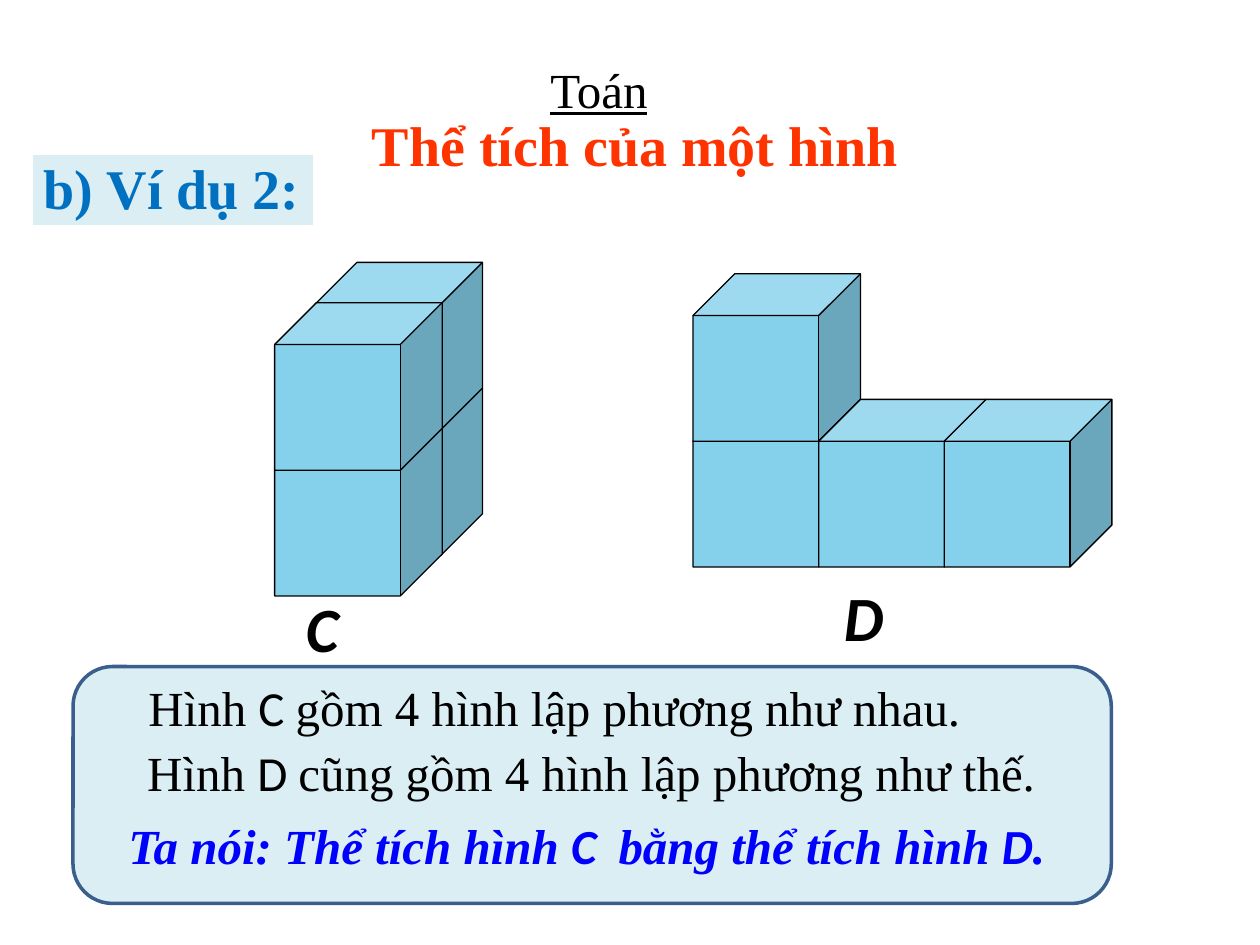
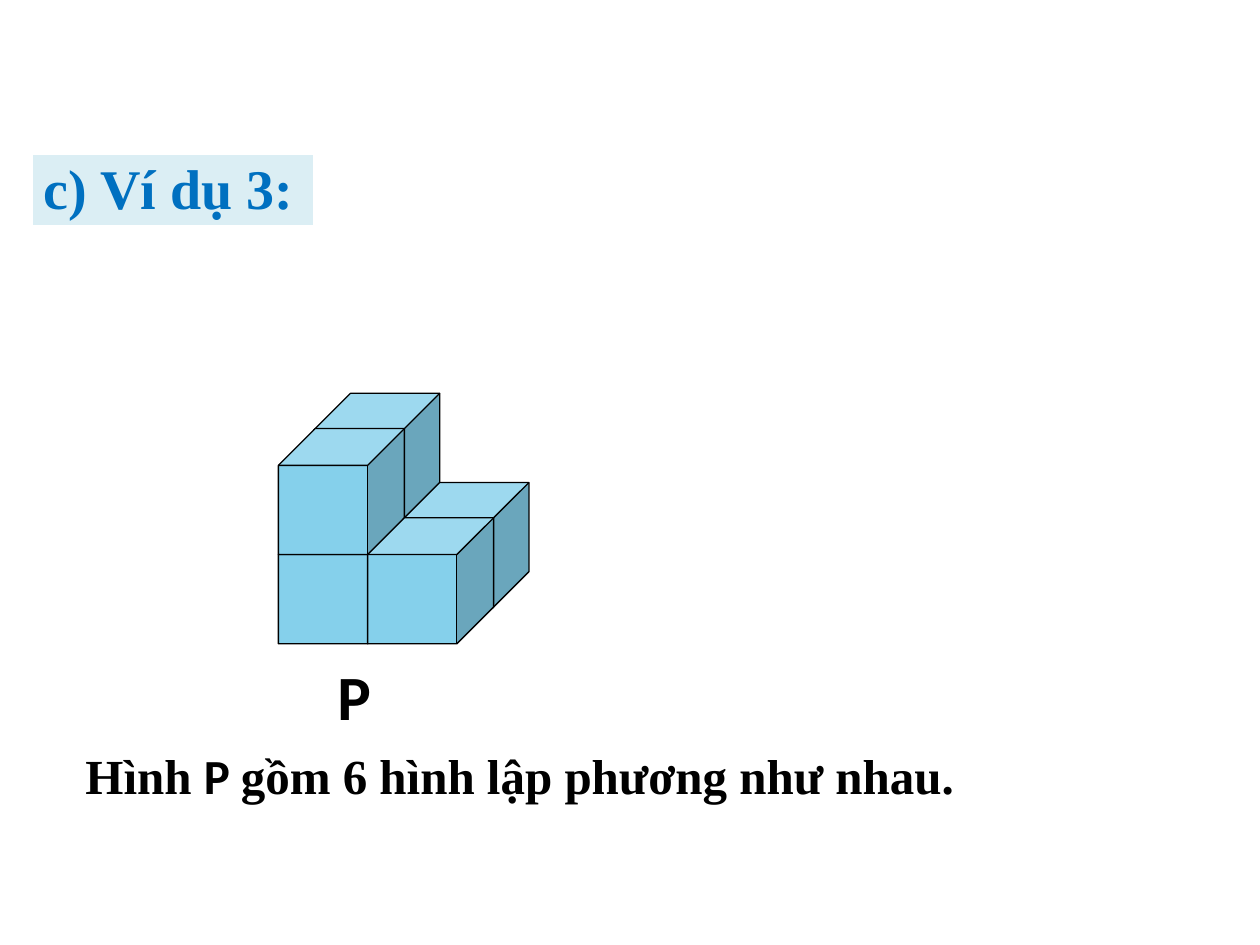
from dataclasses import dataclass

import pptx
import pptx.dml.color
import pptx.enum.shapes
import pptx.enum.text
import pptx.util
from pptx.util import Inches

Shape = pptx.enum.shapes.MSO_SHAPE
Align = pptx.enum.text.PP_ALIGN


@dataclass(frozen=True)
class Theme:
    serif: str = "Times New Roman"
    sans: str = "Calibri"
    black: str = "000000"
    white: str = "FFFFFF"
    pale: str = "DBEEF4"
    cube: str = "85D0EB"
    edge: str = "3A5F8C"
    head: str = "FF3300"
    label: str = "0070C0"
    claim: str = "0000FF"
    body: int = 28
    title: int = 32
    name: int = 36


THEME = Theme()


@dataclass(frozen=True)
class Box:
    left: float
    top: float
    width: float
    height: float

    def place(self) -> tuple:
        return tuple(Inches(n) for n in (self.left, self.top, self.width, self.height))


@dataclass(frozen=True)
class Style:
    size: int
    color: str = THEME.black
    font: str = THEME.serif
    bold: bool = False
    italic: bool = False
    under: bool = False
    align: Align = Align.LEFT


BODY = Style(THEME.body)
STRONG = Style(THEME.body, bold=True)
CLAIM = Style(THEME.body, THEME.claim, bold=True, italic=True)
HEAD = Style(THEME.title, THEME.head, bold=True, align=Align.CENTER)
LABEL = Style(THEME.title, THEME.label, bold=True)
TOPIC = Style(THEME.body, under=True)
NAME = Style(THEME.name, font=THEME.sans, bold=True)
SLANT = Style(THEME.name, font=THEME.sans, bold=True, italic=True)


@dataclass(frozen=True)
class Pile:
    """Cubes stacked from the lower left front one; cells are (column, level, row back)."""
    left: float
    top: float
    side: float
    depth: float
    back: float
    cells: tuple


PILE_C = Pile(2.18, 3.4, 1.33, 0.25, 0.32, ((0, 0, 1), (0, 0, 0), (0, 1, 1), (0, 1, 0)))
PILE_D = Pile(5.5, 3.17, 1.33, 0.25, 0.33, ((0, 0, 0), (0, 1, 0), (1, 0, 0), (2, 0, 0)))
PILE_P = Pile(2.21, 4.11, 1, 0.292, 0.28,
              ((0, 0, 1), (0, 0, 0), (0, 1, 1), (0, 1, 0), (1, 0, 1), (1, 0, 0)))


def rgb(code: str) -> pptx.dml.color.RGBColor:
    return pptx.dml.color.RGBColor.from_string(code)


def draw(slide, kind: Shape, box: Box, fill: str, line: str, weight: float):
    shape = slide.shapes.add_shape(kind, *box.place())
    shape.shadow.inherit = False
    shape.fill.solid()
    shape.fill.fore_color.rgb = rgb(fill)
    shape.line.color.rgb = rgb(line)
    shape.line.width = pptx.util.Pt(weight)
    return shape


def write(slide, box: Box, style: Style, *parts: str) -> None:
    """Write one line whose parts are serif and sans by turns, if there are several."""
    frame = slide.shapes.add_textbox(*box.place()).text_frame
    frame.word_wrap = True
    line = frame.paragraphs[0]
    line.alignment = style.align
    font = line.font
    font.size = pptx.util.Pt(style.size)
    font.color.rgb = rgb(style.color)
    font.bold, font.italic, font.underline = style.bold, style.italic, style.under
    if len(parts) == 1:
        font.name = style.font
    for index, part in enumerate(parts):
        run = line.add_run()
        run.text = part
        if len(parts) > 1:
            run.font.name = (THEME.serif, THEME.sans)[index % 2]


def stack(slide, pile: Pile) -> None:
    face = pile.side * (1 - pile.depth)
    for column, level, row in pile.cells:
        left = pile.left + column * face + row * pile.back
        top = pile.top - level * face - row * pile.back
        box = Box(left, top, pile.side, pile.side)
        cube = draw(slide, Shape.CUBE, box, THEME.cube, THEME.black, 0.75)
        cube.adjustments[0] = pile.depth


def label(slide, text: str) -> None:
    draw(slide, Shape.RECTANGLE, Box(0.25, 1.22, 2.25, 0.58), THEME.pale, THEME.white, 2)
    write(slide, Box(0.25, 1.17, 2.44, 0.64), LABEL, text)


def equal(slide) -> None:
    """Figures C and D have the same volume."""
    draw(slide, Shape.ROUNDED_RECTANGLE, Box(0.58, 5.29, 8.24, 1.88),
         THEME.pale, THEME.edge, 2)
    label(slide, "b) Ví dụ 2:")
    stack(slide, PILE_D)
    stack(slide, PILE_C)
    write(slide, Box(2.33, 4.63, 0.56, 0.71), SLANT, "C")
    write(slide, Box(6.6, 4.54, 0.56, 0.71), SLANT, "D")
    write(slide, Box(2.58, 0.83, 4.92, 0.64), HEAD, "Thể tích của một hình")
    write(slide, Box(4.27, 0.42, 1.23, 0.57), TOPIC, "Toán")
    write(slide, Box(1.08, 5.33, 6.84, 0.57), BODY,
          "Hình ", "C ", "gồm 4 hình lập phương như nhau.")
    write(slide, Box(1.07, 5.84, 7.93, 0.57), BODY,
          "Hình ", "D ", "cũng gồm 4 hình lập phương như thế.")
    write(slide, Box(0.92, 6.42, 8.08, 0.57), CLAIM,
          "Ta nói: Thể tích hình ", "C  ", "bằng thể tích hình ", "D", ".")


def six(slide) -> None:
    """Figure P is made of six cubes."""
    stack(slide, PILE_P)
    write(slide, Box(2.58, 5.17, 0.58, 0.71), NAME, "P")
    label(slide, "c) Ví dụ 3:")
    write(slide, Box(0.58, 5.87, 7.75, 0.57), STRONG,
          "Hình ", "P ", "gồm 6 hình lập phương như nhau.")


def main() -> None:
    deck = pptx.Presentation()
    deck.slide_width, deck.slide_height = Inches(10), Inches(7.5)
    for build in (equal, six):
        build(deck.slides.add_slide(deck.slide_layouts[6]))
    deck.save("out.pptx")


if __name__ == "__main__":
    main()
